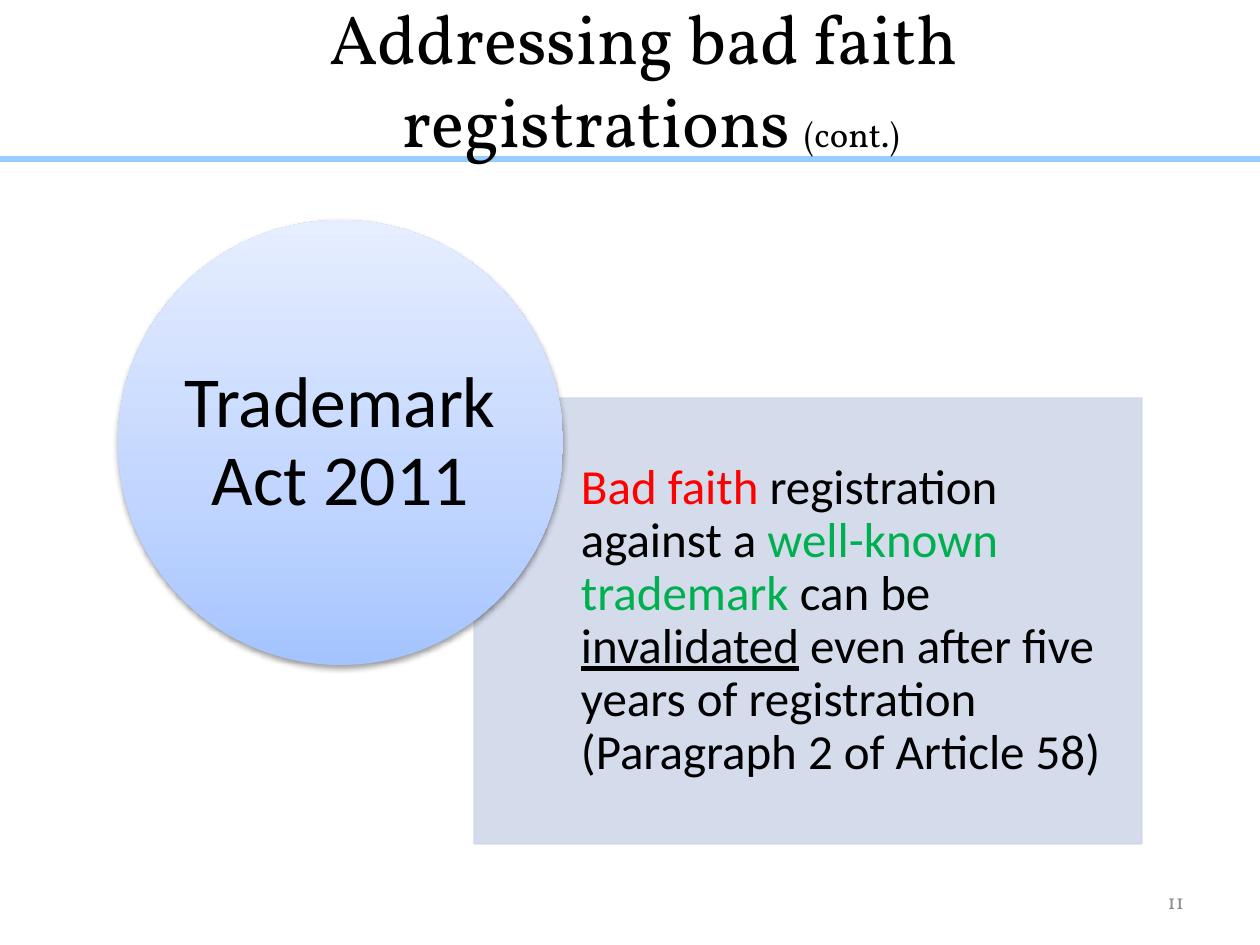
from dataclasses import dataclass

from lxml import etree
from pptx import Presentation
from pptx import util as u
from pptx.dml.color import RGBColor
from pptx.enum import shapes, text
from pptx.oxml import parse_xml
from pptx.oxml.ns import nsdecls, qn

PX_PER_INCH = 126
BLACK = RGBColor(0x00, 0x00, 0x00)
RED = RGBColor(0xFF, 0x00, 0x00)
GREEN = RGBColor(0x00, 0xB0, 0x50)
GRAY = RGBColor(0x8C, 0x8C, 0x8C)
RULE_BLUE = RGBColor(0x99, 0xCC, 0xFF)
PANEL_BLUE = RGBColor(0xD0, 0xD8, 0xE8)
CIRCLE_STOPS = (
    (0, RGBColor(0xA4, 0xC4, 0xFF)),
    (35, RGBColor(0xBF, 0xD4, 0xFF)),
    (100, RGBColor(0xE6, 0xEE, 0xFF)),
)
SERIF = "Vollkorn"
SANS = "Calibri"


@dataclass(frozen=True)
class Box:
    left: int
    top: int
    width: int
    height: int

    def emu(self) -> tuple[int, ...]:
        return tuple(px(v) for v in (self.left, self.top, self.width, self.height))


@dataclass(frozen=True)
class Run:
    text: str
    size: float
    font: str = SANS
    color: RGBColor = BLACK
    underline: bool = False


def px(value: int) -> int:
    return round(value * u.Inches(1) / PX_PER_INCH)


def write(tf, runs: list[Run], align, spacing: float | None = None,
          insets: tuple[int, int, int, int] = (0, 0, 0, 0)) -> None:
    tf.word_wrap = True
    tf.auto_size = text.MSO_AUTO_SIZE.NONE
    tf.vertical_anchor = text.MSO_ANCHOR.MIDDLE
    tf.margin_left, tf.margin_top, tf.margin_right, tf.margin_bottom = map(px, insets)
    p = tf.paragraphs[0]
    p.alignment = align
    if spacing:
        p.line_spacing = spacing
    for run in runs:
        for i, line in enumerate(run.text.split("\n")):
            if i:
                p.add_line_break()
            r = p.add_run()
            r.text = line
            r.font.size = u.Pt(run.size)
            r.font.name = run.font
            r.font.color.rgb = run.color
            if run.underline:
                r.font.underline = True


def add_shape(s, kind, box: Box, color: RGBColor | None = None):
    sp = s.shapes.add_shape(kind, *box.emu())
    sp.shadow.inherit = False
    sp.line.fill.background()
    if color is not None:
        sp.fill.solid()
        sp.fill.fore_color.rgb = color
    return sp


def set_alpha(sp, percent: int) -> None:
    for color in sp._element.spPr.iter(qn("a:srgbClr")):
        etree.SubElement(color, qn("a:alpha"), val=str(percent * 1000))


def add_circle(s, box: Box) -> None:
    sp = add_shape(s, shapes.MSO_SHAPE.OVAL, box)
    stops = "".join(
        f'<a:gs pos="{pos * 1000}"><a:srgbClr val="{color}"/></a:gs>'
        for pos, color in CIRCLE_STOPS
    )
    sp._element.spPr.find(qn("a:prstGeom")).addnext(parse_xml(
        f'<a:gradFill {nsdecls("a")} rotWithShape="1"><a:gsLst>{stops}</a:gsLst>'
        '<a:lin ang="16200000" scaled="0"/></a:gradFill>'))
    effects = sp._element.spPr.find(qn("a:effectLst"))
    effects.append(parse_xml(
        f'<a:outerShdw {nsdecls("a")} blurRad="40000" dist="20000" dir="5400000" '
        'rotWithShape="0"><a:srgbClr val="000000"><a:alpha val="38000"/>'
        '</a:srgbClr></a:outerShdw>'))


def add_text(s, box: Box, runs: list[Run], align, spacing: float | None = None,
             insets: tuple[int, int, int, int] = (0, 0, 0, 0)) -> None:
    write(s.shapes.add_textbox(*box.emu()).text_frame, runs, align, spacing, insets)


def main() -> None:
    prs = Presentation()
    prs.slide_width, prs.slide_height = u.Inches(10), u.Inches(7.5)
    s = prs.slides.add_slide(prs.slide_layouts[5])
    align = text.PP_ALIGN

    title = s.shapes.title
    title.left, title.top, title.width, title.height = Box(84, 0, 1134, 157).emu()
    write(title.text_frame, [
        Run("Addressing bad faith \nregistrations ", 39.6, SERIF),
        Run("(cont.)", 19.8, SERIF),
    ], align.CENTER, insets=(13, 6, 13, 6))

    rule = add_shape(s, shapes.MSO_SHAPE.RECTANGLE, Box(-5, 156, 1268, 6), RULE_BLUE)
    s.shapes._spTree.insert(2, rule._element)

    panel = add_shape(s, shapes.MSO_SHAPE.RECTANGLE, Box(474, 398, 668, 446), PANEL_BLUE)
    panel.line.color.rgb = PANEL_BLUE
    panel.line.width = u.Pt(0.75)
    set_alpha(panel, 90)
    add_text(s, Box(581, 398, 561, 446), [
        Run("Bad faith ", 28, color=RED),
        Run("registration against a ", 28),
        Run("well-known trademark", 28, color=GREEN),
        Run(" can be ", 28),
        Run("invalidated", 28, underline=True),
        Run(" even after five years of registration (Paragraph 2 of Article 58)", 28),
    ], align.LEFT, 0.9, (0, 28, 28, 28))

    add_circle(s, Box(118, 220, 445, 445))
    add_text(s, Box(183, 286, 315, 315), [Run("Trademark Act 2011", 41)], align.CENTER, 0.9)

    add_text(s, Box(903, 876, 294, 50), [Run("11", 12, SERIF, GRAY)],
             align.RIGHT, insets=(13, 6, 13, 6))
    prs.save("out.pptx")


if __name__ == "__main__":
    main()
